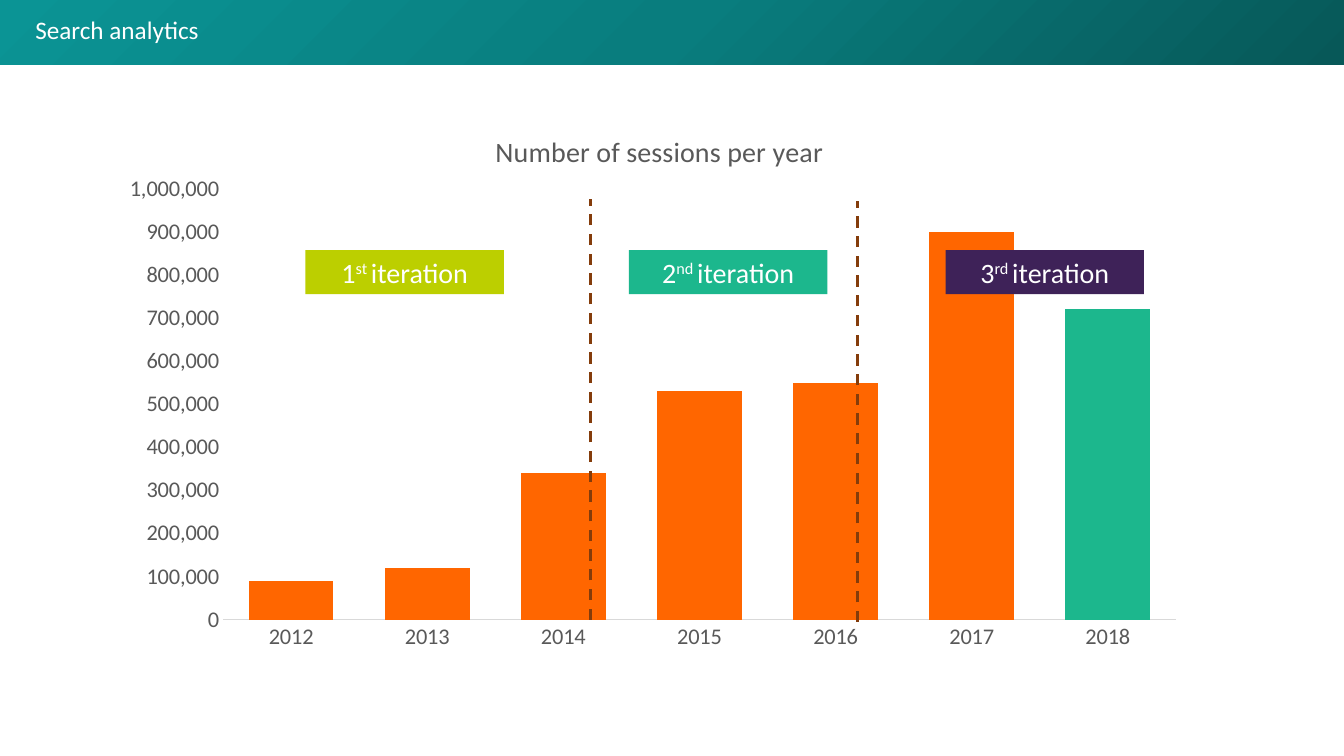
"""Build a slide with a column chart of yearly sessions and its site iterations."""
from lxml import etree
from pptx import Presentation
from pptx.chart.data import CategoryChartData
from pptx.dml.color import RGBColor
from pptx.enum.chart import XL_CHART_TYPE as ChartType, XL_TICK_MARK as TickMark
from pptx.enum.dml import MSO_LINE
from pptx.enum.shapes import MSO_CONNECTOR, MSO_SHAPE
from pptx.enum.text import MSO_ANCHOR, PP_ALIGN
from pptx.oxml import parse_xml
from pptx.oxml.ns import nsdecls, qn
from pptx.util import Pt

FONT = "Calibri"
GREY, WHITE, GREEN = "595959", "FFFFFF", "1CB78D"
SESSIONS = {
    "2012": 90000, "2013": 120000, "2014": 340000, "2015": 530000,
    "2016": 550000, "2017": 900000, "2018": 720000,
}
ITERATIONS = [
    ("1", "st ", 218.2, "BCCF00"),
    ("2", "nd ", 449.3, GREEN),
    ("3", "rd ", 675.4, "3E2258"),
]
DIVIDERS = [(421.9, 141.8), (612.7, 143.3)]
DIVIDER_LENGTH = 301


def rgb(color):
    return RGBColor.from_string(color)


def style_font(font, size, color):
    font.name, font.size, font.bold = FONT, Pt(size), False
    font.color.rgb = rgb(color)


def add_box(slide, left, top, width, height):
    box = slide.shapes.add_shape(
        MSO_SHAPE.RECTANGLE, Pt(left), Pt(top), Pt(width), Pt(height))
    box.shadow.inherit = False
    box.line.fill.background()
    return box


def add_header(slide, text):
    band = add_box(slide, 0, 0, 960, 46.2)
    stops = [(0, "075858"), (50, "097D7E"), (100, "0B9495")]
    stop_xml = "".join(
        f'<a:gs pos="{share * 1000}"><a:srgbClr val="{color}"/></a:gs>'
        for share, color in stops)
    gradient = parse_xml(
        f'<a:gradFill {nsdecls("a")} rotWithShape="1"><a:gsLst>{stop_xml}</a:gsLst>'
        '<a:path path="circle"><a:fillToRect l="100000" t="100000"/></a:path>'
        '</a:gradFill>')
    band.element.spPr.find(qn("a:prstGeom")).addnext(gradient)

    title = slide.shapes.title
    title.element.addprevious(band.element)
    title.left, title.top, title.width, title.height = (
        Pt(18), Pt(6.7), Pt(411), Pt(29))
    frame = title.text_frame
    frame.text = text
    frame.vertical_anchor = MSO_ANCHOR.MIDDLE
    para = frame.paragraphs[0]
    para.alignment = PP_ALIGN.LEFT
    para.line_spacing = 1.0
    style_font(para.runs[0].font, 18, WHITE)


def make_layout(target, **places):
    layout = etree.Element(qn("c:layout"))
    manual = etree.SubElement(layout, qn("c:manualLayout"))
    if target:
        etree.SubElement(manual, qn("c:layoutTarget"), val=target)
    for axis in "xy":
        etree.SubElement(manual, qn(f"c:{axis}Mode"), val="edge")
    for name, value in places.items():
        etree.SubElement(manual, qn(f"c:{name}"), val=str(value))
    return layout


def place_chart_part(part, layout, index):
    for old in part.findall(qn("c:layout")):
        part.remove(old)
    part.insert(index, layout)


def add_sessions_chart(slide):
    data = CategoryChartData(number_format="#,##0")
    data.categories = list(SESSIONS)
    data.add_series("Series 1", list(SESSIONS.values()))
    chart = slide.shapes.add_chart(
        ChartType.COLUMN_CLUSTERED, Pt(54), Pt(73.4), Pt(823), Pt(427), data).chart
    style_font(chart.font, 16, GREY)
    chart.has_legend = False

    title_frame = chart.chart_title.text_frame
    title_frame.text = "Number of sessions per year"
    style_font(title_frame.paragraphs[0].runs[0].font, 20, GREY)
    root = chart.element
    place_chart_part(
        next(root.iter(qn("c:title"))), make_layout(None, x=0.36, y=0.04), 1)
    place_chart_part(
        next(root.iter(qn("c:plotArea"))),
        make_layout("inner", x=0.128, y=0.144, w=0.827, h=0.721), 0)

    for axis in (chart.category_axis, chart.value_axis):
        axis.has_major_gridlines = False
        axis.major_tick_mark = axis.minor_tick_mark = TickMark.NONE
        style_font(axis.tick_labels.font, 16, GREY)
    chart.category_axis.format.line.color.rgb = rgb("D9D9D9")
    chart.category_axis.format.line.width = Pt(0.75)
    values = chart.value_axis
    values.format.line.fill.background()
    values.minimum_scale, values.maximum_scale = 0, 1000000
    values.major_unit = 100000
    values.tick_labels.number_format = "#,##0"
    values.tick_labels.number_format_is_linked = False

    plot = chart.plots[0]
    plot.gap_width, plot.overlap = 61, -27
    plot.vary_by_categories = False
    series = plot.series[0]
    latest_year = series.points[len(SESSIONS) - 1]
    for item, color in ((series, "FF6600"), (latest_year, GREEN)):
        item.format.fill.solid()
        item.format.fill.fore_color.rgb = rgb(color)


def add_divider(slide, x, top):
    line = slide.shapes.add_connector(
        MSO_CONNECTOR.STRAIGHT, Pt(x), Pt(top + DIVIDER_LENGTH), Pt(x), Pt(top))
    line.line.color.rgb = rgb("843C0B")
    line.line.width = Pt(2)
    line.line.dash_style = MSO_LINE.DASH
    etree.SubElement(line.element.spPr, qn("a:effectLst"))


def add_iteration(slide, number, suffix, left, color):
    box = add_box(slide, left, 178.6, 141.8, 31.5)
    box.fill.solid()
    box.fill.fore_color.rgb = rgb(color)
    box.text_frame.word_wrap = True
    box.text_frame.vertical_anchor = MSO_ANCHOR.MIDDLE
    para = box.text_frame.paragraphs[0]
    para.alignment = PP_ALIGN.CENTER
    for text in (number, suffix, "iteration"):
        span = para.add_run()
        span.text = text
        style_font(span.font, 20, WHITE)
        if text == suffix:
            span.font._element.set("baseline", "30000")


def main():
    deck = Presentation()
    deck.slide_width, deck.slide_height = Pt(960), Pt(540)
    slide = deck.slides.add_slide(deck.slide_layouts[5])
    add_header(slide, "Search analytics")
    add_sessions_chart(slide)
    for x, top in DIVIDERS:
        add_divider(slide, x, top)
    for iteration in ITERATIONS:
        add_iteration(slide, *iteration)
    deck.save("out.pptx")


if __name__ == "__main__":
    main()
